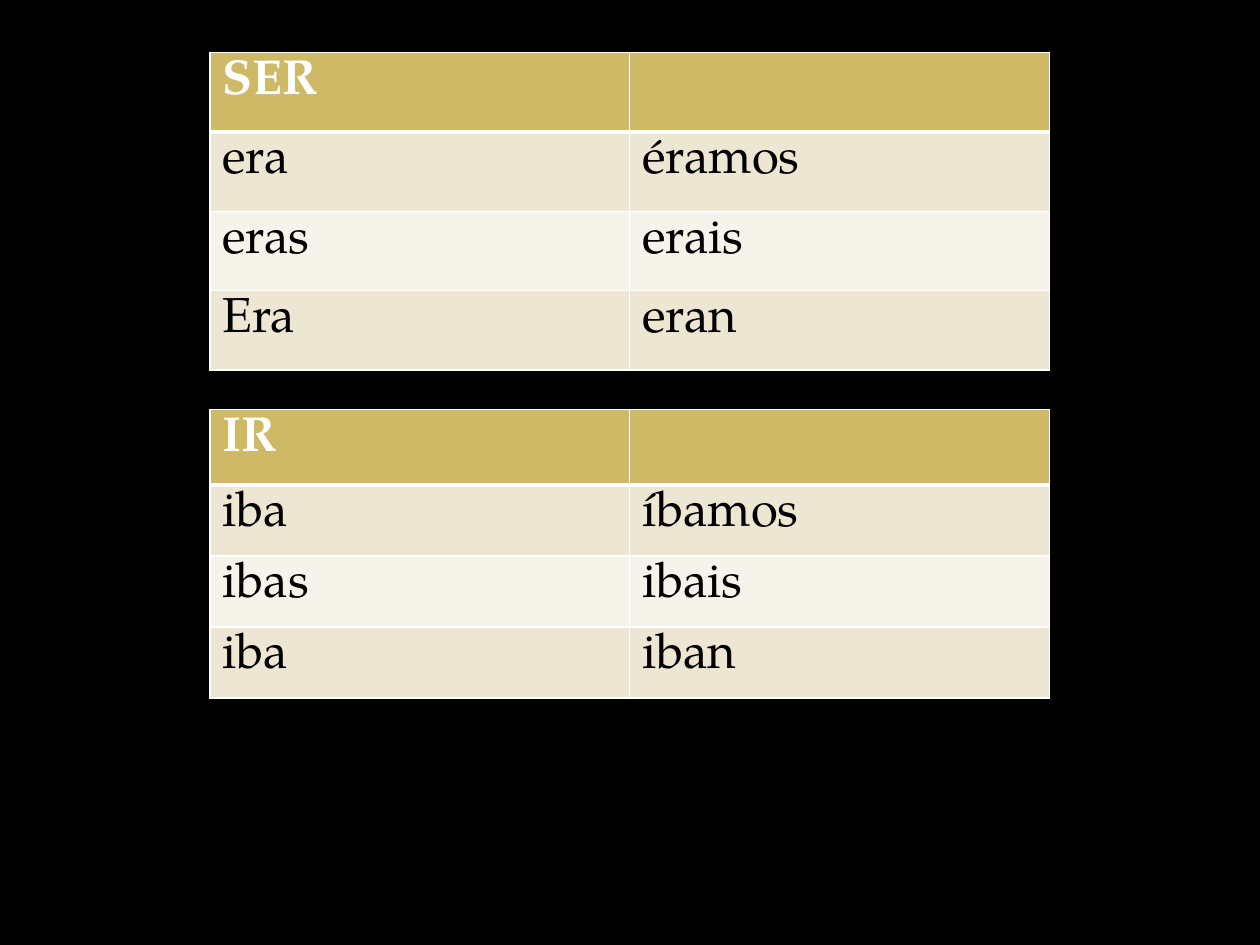
from lxml.etree import SubElement
from pptx import Presentation
from pptx.dml.color import RGBColor as Rgb
from pptx.oxml.ns import qn
from pptx.util import Cm, Pt

COLORS = {
    "background": "000000",
    "header": "CEB966",
    "odd": "EDE6D3",
    "even": "F6F3EA",
    "line": "FFFFFF",
    "title": "FFFFFF",
    "text": "000000",
}
FONT = "TeX Gyre Pagella"
VERBS = [
    (1.06, 1.6, 1.6, [("SER", ""), ("era", "éramos"), ("eras", "erais"), ("Era", "eran")]),
    (8.26, 1.52, 1.43, [("IR", ""), ("iba", "íbamos"), ("ibas", "ibais"), ("iba", "iban")]),
]


def write(cell, text, size=28, color="text", bold=False):
    span = cell.text_frame.paragraphs[0].add_run()
    span.text = text
    span.font.name = FONT
    span.font.size = Pt(size)
    span.font.bold = bold
    span.font.color.rgb = Rgb.from_string(COLORS[color])


def add_borders(cell, **widths):
    properties = cell._tc.get_or_add_tcPr()
    for position, side in enumerate("LRTB"):
        line = SubElement(properties, qn(f"a:ln{side}"), w=str(Pt(widths.get(side, 1))))
        fill = SubElement(line, qn("a:solidFill"))
        SubElement(fill, qn("a:srgbClr"), val=COLORS["line"])
        properties.insert(position, line)


deck = Presentation()
deck.slide_width, deck.slide_height = Cm(25.4), Cm(19.05)
page = deck.slides.add_slide(deck.slide_layouts[6])
page.background.fill.solid()
page.background.fill.fore_color.rgb = Rgb.from_string(COLORS["background"])

for top, header_height, row_height, forms in VERBS:
    heights = [header_height] + [row_height] * (len(forms) - 1)
    frame = page.shapes.add_table(
        len(forms), 2, Cm(4.23), Cm(top), Cm(16.93), Cm(sum(heights))
    )
    table = frame.table
    for row, height in enumerate(heights):
        table.rows[row].height = Cm(height)
        shade = "header" if row == 0 else "odd" if row % 2 else "even"
        for column, text in enumerate(forms[row]):
            cell = table.cell(row, column)
            cell.fill.solid()
            cell.fill.fore_color.rgb = Rgb.from_string(COLORS[shade])
            add_borders(cell, T=3 if row == 1 else 1, B=3 if row == 0 else 1)
            if text:
                write(cell, text, color="text" if row else "title", bold=row == 0)

deck.save("out.pptx")
